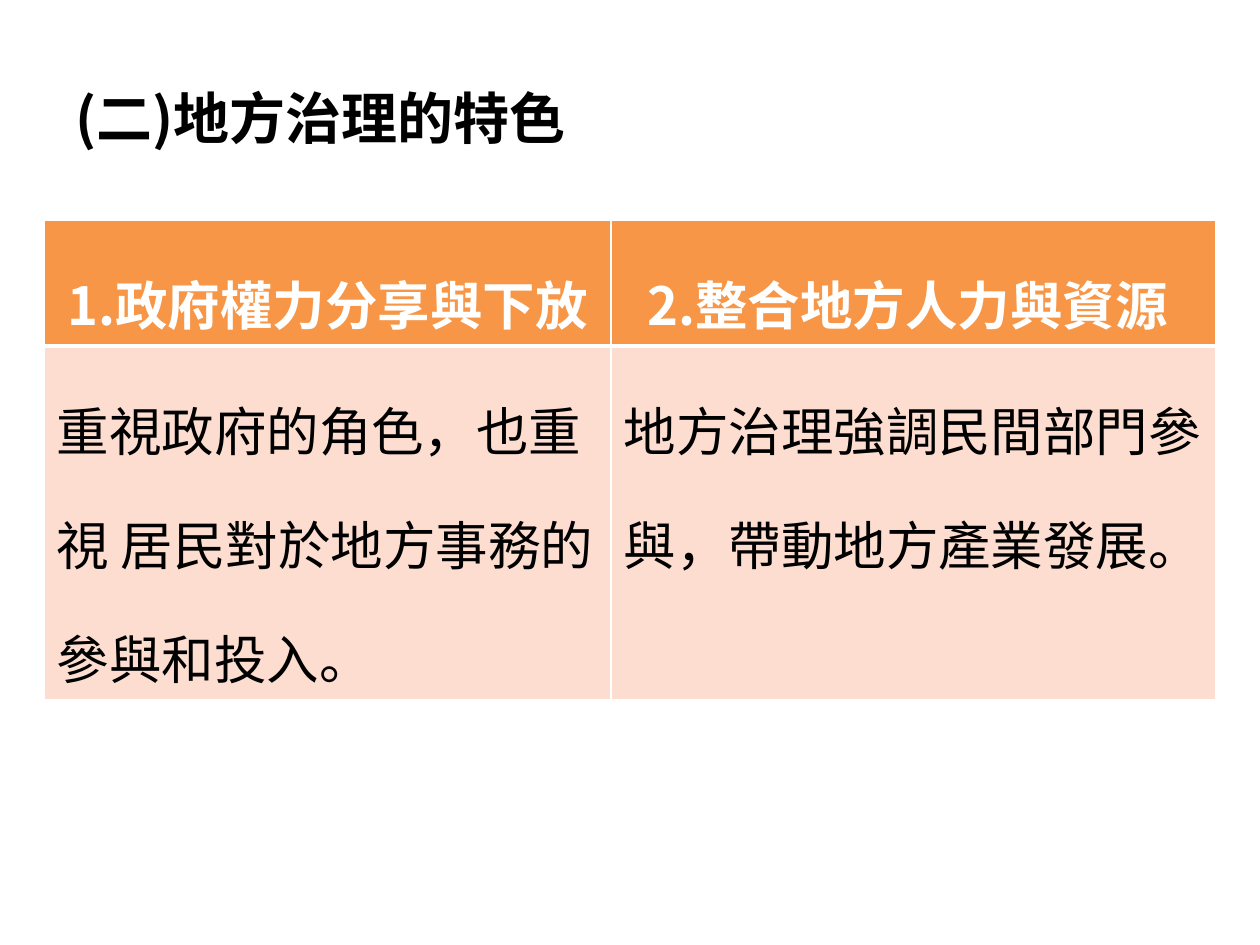
"""Builds a slide on the features of local governance with a two-column table."""
from lxml.etree import SubElement
from pptx import Presentation
from pptx.dml.color import RGBColor
from pptx.enum.text import MSO_ANCHOR, PP_ALIGN
from pptx.oxml.ns import qn
from pptx.util import Emu, Pt

FONT = "Noto Sans CJK SC"
HEADERS = ["1.政府權力分享與下放", "2.整合地方人力與資源 "]
BODIES = ["重視政府的角色，也重視 居民對於地方事務的參與和投入。",
          "地方治理強調民間部門參與，帶動地方產業發展。"]
COLUMN_WIDTHS = [567, 605]
ROW_HEIGHTS = [126, 354]


def px(n):
    return Emu(round(n * 914400 / 126))


def rgb(value):
    return RGBColor.from_string(value)


def style(p, size, color, bold):
    font = p.font
    font.name, font.size, font.bold = FONT, Pt(size), bold
    font.color.rgb = rgb(color)
    SubElement(font._element, qn("a:ea"), typeface=FONT)


def add_title(s, text):
    tf = s.shapes.add_textbox(px(63), px(38), px(1134), px(158)).text_frame
    tf.word_wrap = True
    tf.vertical_anchor = MSO_ANCHOR.MIDDLE
    p = tf.paragraphs[0]
    p.text = text
    pPr = p._p.get_or_add_pPr()
    pPr.set("marL", str(px(102)))
    pPr.set("indent", str(-px(102)))
    style(p, 32, "000000", True)


def add_borders(cell, widths):
    tcPr = cell._tc.get_or_add_tcPr()
    for side, width in zip("LRTB", widths):
        ln = SubElement(tcPr, qn(f"a:ln{side}"), w=str(Pt(width)))
        fill = SubElement(ln, qn("a:solidFill"))
        SubElement(fill, qn("a:srgbClr"), val="FFFFFF")


def fill_cell(cell, text, fill, color, bold, align, borders):
    add_borders(cell, borders)
    cell.fill.solid()
    cell.fill.fore_color.rgb = rgb(fill)
    p = cell.text_frame.paragraphs[0]
    p.text = text
    p.alignment = align
    p.line_spacing = 1.5
    style(p, 30, color, bold)


def add_feature_table(s):
    table = s.shapes.add_table(2, 2, px(44), px(220), px(sum(COLUMN_WIDTHS)),
                               px(sum(ROW_HEIGHTS))).table
    for column, width in zip(table.columns, COLUMN_WIDTHS):
        column.width = px(width)
    for row, height in zip(table.rows, ROW_HEIGHTS):
        row.height = px(height)
    for i, (header, body) in enumerate(zip(HEADERS, BODIES)):
        fill_cell(table.cell(0, i), header, "F79646", "FFFFFF", True,
                  PP_ALIGN.CENTER, (1, 1, 1, 3))
        fill_cell(table.cell(1, i), body, "FCDDCF", "000000", False,
                  PP_ALIGN.LEFT, (1, 1, 3, 1))


def main():
    prs = Presentation()
    prs.slide_width, prs.slide_height = px(1260), px(945)
    s = prs.slides.add_slide(prs.slide_layouts[6])
    add_title(s, "(二)地方治理的特色")
    add_feature_table(s)
    prs.save("out.pptx")


if __name__ == "__main__":
    main()
